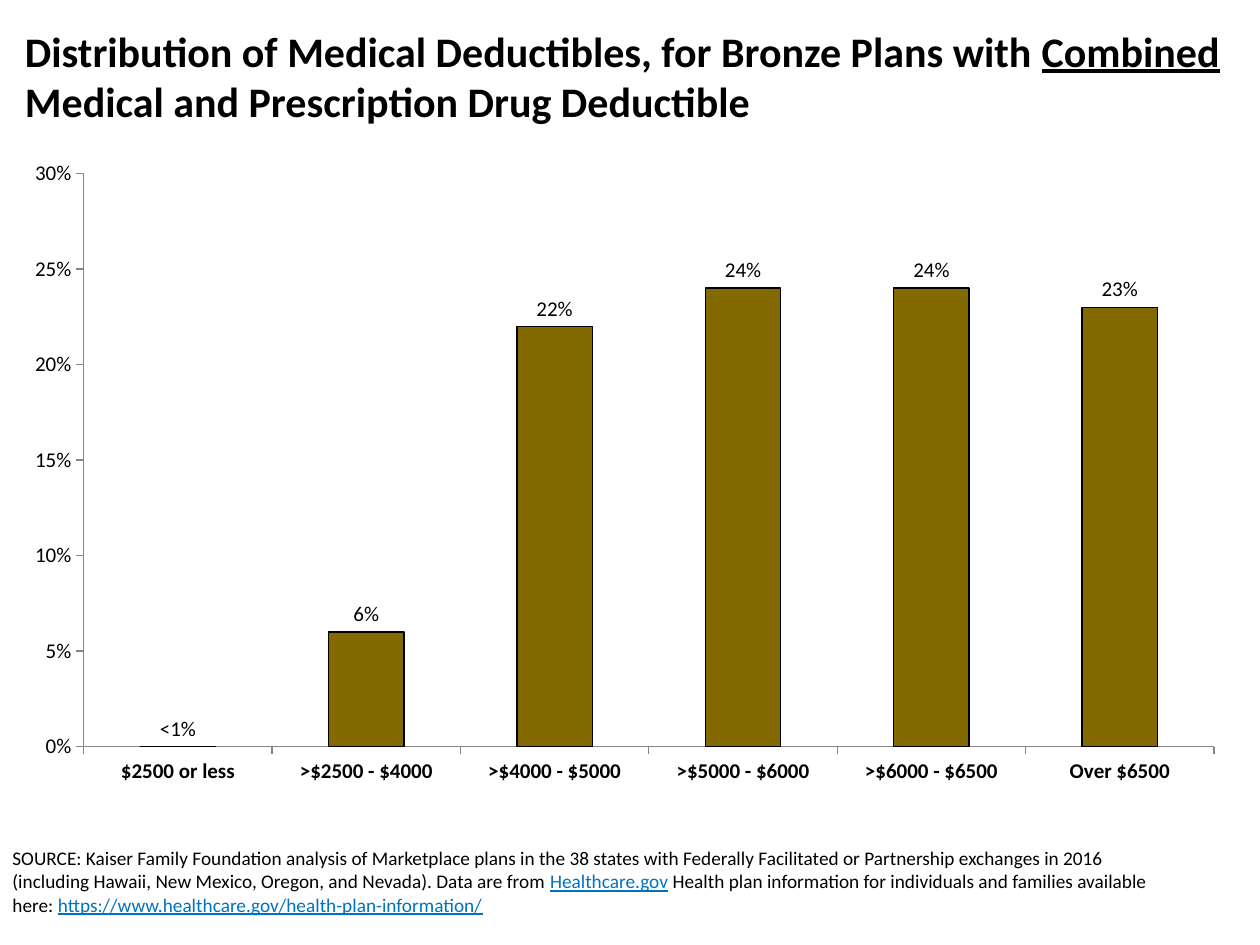
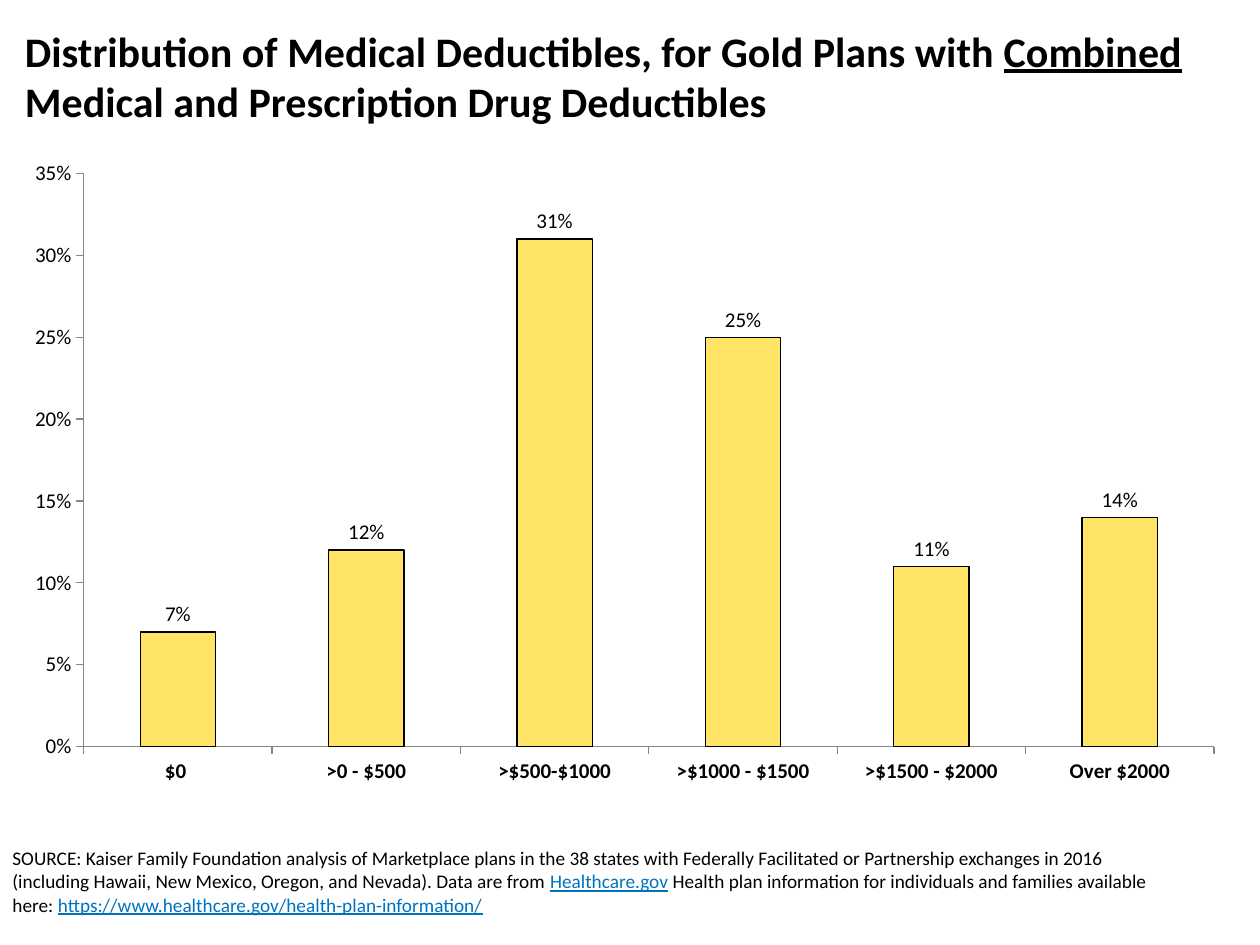
from lxml import etree
from pptx import Presentation
from pptx import util as u
from pptx.chart import data as chart_data
from pptx.dml import color
from pptx.enum import chart as chart_enum, text
from pptx.oxml import ns

COLOURS = {
    "text": "000000",
    "link": "0072C0",
    "axis": "868686",
    "bronze": "826A00",
    "gold": "FFE468",
}
FONT = "Calibri"
TITLE_BOX = (0.1, 0.1, 9.8, 1)
CHART_BOX = (0.08, 1.17, 9.75, 5.17)
SOURCE_BOX = (0, 6.67, 9.25, 0.8)
PLOT_LAYOUT = {"x": 0.06, "y": 0.04, "w": 0.92, "h": 0.88}

SOURCE_PARTS = [
    ("SOURCE: Kaiser Family Foundation analysis of Marketplace plans in the 38 states "
     "with Federally Facilitated or Partnership exchanges in 2016 (including Hawaii, "
     "New Mexico, Oregon, and Nevada). Data are from ", False),
    ("Healthcare.gov", True),
    (" Health plan information for individuals and families available here: ", False),
    ("https://www.healthcare.gov/health-plan-information/", True),
]

PLANS = [
    {
        "metal": "Bronze",
        "ending": "Deductible",
        "shares": {"$2500 or less": 0, ">$2500 - $4000": 0.06, ">$4000 - $5000": 0.22,
                   ">$5000 - $6000": 0.24, ">$6000 - $6500": 0.24, "Over $6500": 0.23},
        "axis_top": 0.3,
        "special_labels": {0: "<1%"},
    },
    {
        "metal": "Gold",
        "ending": "Deductibles",
        "shares": {"$0 ": 0.07, ">0 - $500": 0.12, ">$500-$1000": 0.31,
                   ">$1000 - $1500": 0.25, ">$1500 - $2000": 0.11, "Over $2000": 0.14},
        "axis_top": 0.35,
        "special_labels": {},
    },
]


def rgb(name):
    """Return the named colour."""
    return color.RGBColor.from_string(COLOURS[name])


def set_font(font, size, bold=False):
    """Apply the shared typeface and text colour."""
    font.name = FONT
    font.size = u.Pt(size)
    font.bold = bold
    font.color.rgb = rgb("text")


def add_paragraph_box(slide, box, parts, size, bold, anchor, accent):
    """Add one wrapped paragraph whose marked parts are underlined in the accent colour."""
    frame = slide.shapes.add_textbox(*map(u.Inches, box)).text_frame
    frame.word_wrap = True
    frame.vertical_anchor = anchor
    paragraph = frame.paragraphs[0]
    set_font(paragraph.font, size, bold)
    for words, marked in parts:
        run = paragraph.add_run()
        run.text = words
        if marked:
            run.font.underline = True
            run.font.color.rgb = rgb(accent)


def add_title(slide, box, plan):
    """Add the slide title for one plan level."""
    parts = [
        (f"Distribution of Medical Deductibles, for {plan['metal']} Plans with ", False),
        ("Combined", True),
        (f" Medical and Prescription Drug {plan['ending']}", False),
    ]
    add_paragraph_box(slide, box, parts, 24, True, text.MSO_ANCHOR.MIDDLE, "text")


def add_source(slide, box):
    """Add the source line at the foot of the slide."""
    add_paragraph_box(slide, box, SOURCE_PARTS, 11, False, text.MSO_ANCHOR.TOP, "link")


def fix_plot_area(chart):
    """Give the inner plot area the same place in every chart."""
    plot_area = chart.plots[0]._element.getparent()
    for old in plot_area.findall(ns.qn("c:layout")):
        plot_area.remove(old)
    layout = etree.Element(ns.qn("c:layout"))
    manual = etree.SubElement(layout, ns.qn("c:manualLayout"))
    settings = {"layoutTarget": "inner", "xMode": "edge", "yMode": "edge", **PLOT_LAYOUT}
    for tag, value in settings.items():
        etree.SubElement(manual, ns.qn(f"c:{tag}")).set("val", str(value))
    plot_area.insert(0, layout)


def style_axis(axis, bold):
    """Set the font, line and ticks of an axis."""
    axis.has_major_gridlines = False
    axis.major_tick_mark = chart_enum.XL_TICK_MARK.OUTSIDE
    axis.minor_tick_mark = chart_enum.XL_TICK_MARK.NONE
    axis.format.line.color.rgb = rgb("axis")
    axis.format.line.width = u.Pt(0.75)
    set_font(axis.tick_labels.font, 12, bold)


def add_deductible_chart(slide, box, plan):
    """Add the column chart of plan shares by deductible range."""
    shares = chart_data.CategoryChartData(number_format="0%")
    shares.categories = list(plan["shares"])
    shares.add_series("Series 1", list(plan["shares"].values()))
    chart = slide.shapes.add_chart(
        chart_enum.XL_CHART_TYPE.COLUMN_CLUSTERED, *map(u.Inches, box), shares).chart
    chart.has_legend = False
    chart.has_title = False
    set_font(chart.font, 18)
    fix_plot_area(chart)

    style_axis(chart.category_axis, bold=True)
    style_axis(chart.value_axis, bold=False)
    chart.value_axis.minimum_scale = 0
    chart.value_axis.maximum_scale = plan["axis_top"]
    chart.value_axis.major_unit = 0.05
    chart.value_axis.tick_labels.number_format = "0%"
    chart.value_axis.tick_labels.number_format_is_linked = False

    columns = chart.plots[0]
    columns.gap_width = 150
    columns.vary_by_categories = False
    series = columns.series[0]
    series.format.fill.solid()
    series.format.fill.fore_color.rgb = rgb(plan["metal"].lower())
    series.format.line.color.rgb = rgb("text")
    series.format.line.width = u.Pt(0.75)

    labels = series.data_labels
    labels.show_value = True
    labels.number_format = "0%"
    labels.number_format_is_linked = False
    labels.position = chart_enum.XL_LABEL_POSITION.OUTSIDE_END
    set_font(labels.font, 12)
    for index, words in plan["special_labels"].items():
        label = series.points[index].data_label
        label.text_frame.text = words
        set_font(label.text_frame.paragraphs[0].runs[0].font, 12)
        label.position = chart_enum.XL_LABEL_POSITION.OUTSIDE_END


def build_plan_slide(deck, plan):
    """Add one slide with title, chart and source."""
    slide = deck.slides.add_slide(deck.slide_layouts[6])
    add_source(slide, SOURCE_BOX)
    add_title(slide, TITLE_BOX, plan)
    add_deductible_chart(slide, CHART_BOX, plan)


def main():
    """Build and save the deck."""
    deck = Presentation()
    deck.slide_width, deck.slide_height = u.Inches(10), u.Inches(7.5)
    for plan in PLANS:
        build_plan_slide(deck, plan)
    deck.save("out.pptx")


if __name__ == "__main__":
    main()
